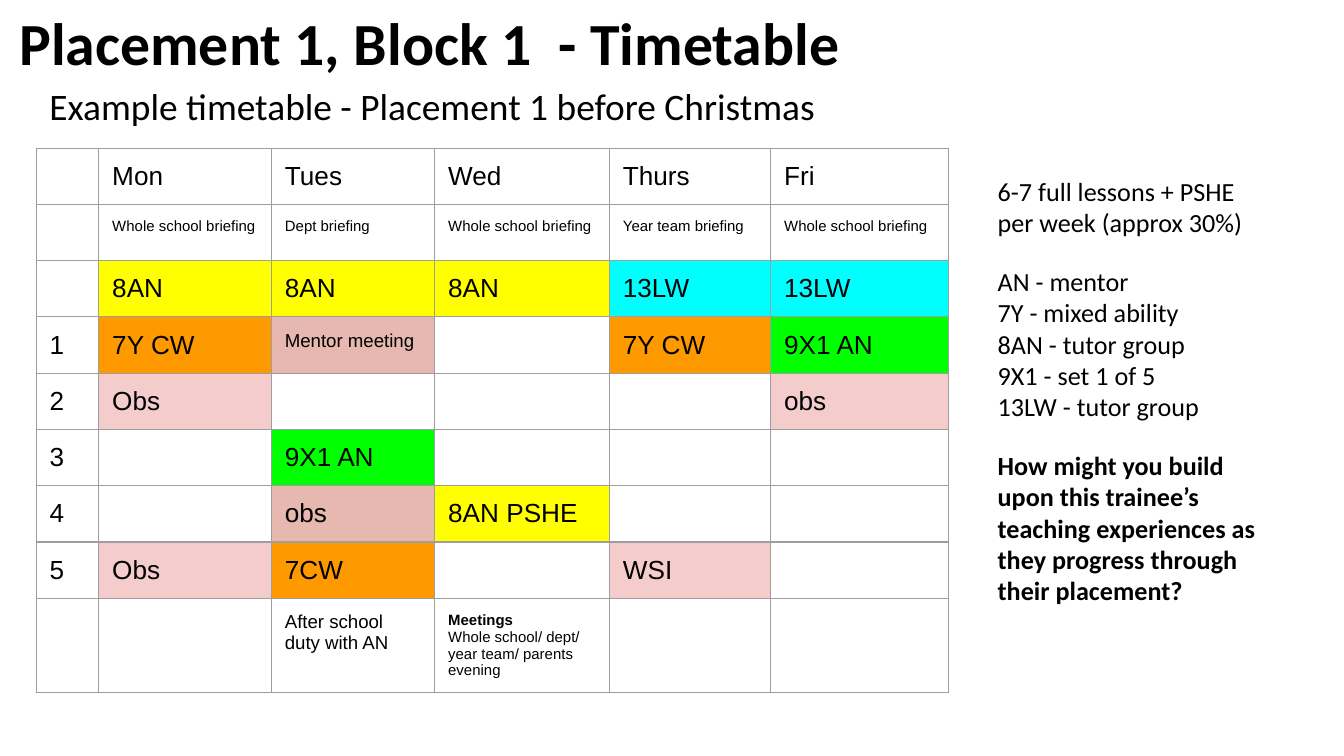
from lxml import etree
from pptx import Presentation
from pptx.dml.color import RGBColor
from pptx.enum.text import MSO_ANCHOR, MSO_AUTO_SIZE, PP_ALIGN
from pptx.oxml.ns import qn
from pptx.util import Inches, Pt

LEFT = PP_ALIGN.LEFT
MIDDLE, TOP = MSO_ANCHOR.MIDDLE, MSO_ANCHOR.TOP
NO_FIT = MSO_AUTO_SIZE.NONE

deck = Presentation()
deck.slide_width = Inches(10)
deck.slide_height = deck.slide_width * 9 // 16
column, row = deck.slide_width / 100, deck.slide_height / 100
page = deck.slides.add_slide(deck.slide_layouts[5])


def colour(value):
    return RGBColor.from_string(value)


def write(frame, lines, size, inset=0.1, anchor=TOP):
    frame.word_wrap = True
    for number, (line, bold, gap) in enumerate(lines):
        para = frame.paragraphs[0] if number == 0 else frame.add_paragraph()
        para.text = line
        para.alignment = LEFT
        para.space_before = Pt(gap)
        para.font.name, para.font.size, para.font.bold = "Calibri", Pt(size), bold
        para.font.color.rgb = colour("000000")
    frame.vertical_anchor = anchor
    frame.auto_size = NO_FIT
    frame.margin_left = frame.margin_right = Inches(inset)
    frame.margin_top = frame.margin_bottom = Inches(inset)


title = page.shapes.title
title.left, title.top = int(0.75 * column), int(-2.85 * row)
title.width, title.height = int(90 * column), int(16.7 * row)
write(title.text_frame, [("Placement 1, Block 1  - Timetable", True, 0)], 32, 0.07, MIDDLE)

subtitle = [("Example timetable - Placement 1 before Christmas", False, 0)]
notes = [
    ("6-7 full lessons + PSHE per week (approx 30%)", False, 0),
    ("AN - mentor", False, 14.6),
    ("7Y - mixed ability", False, 0),
    ("8AN - tutor group", False, 0),
    ("9X1 - set 1 of 5", False, 0),
    ("13LW - tutor group", False, 0),
    ("How might you build upon this trainee’s teaching experiences as they progress through their placement?", True, 14.6),
]
for left, top, width, height, lines, size in [
    (2.7, 9.25, 64.7, 9.25, subtitle, 20),
    (73.25, 21.4, 21.4, 9.8, notes, 14),
]:
    box = page.shapes.add_textbox(int(left * column), int(top * row), int(width * column), int(height * row))
    write(box.text_frame, lines, size)

timetable = [
    ["", "Mon", "Tues", "Wed", "Thurs", "Fri"],
    ["", "Whole school briefing", "Dept briefing", "Whole school briefing", "Year team briefing", "Whole school briefing"],
    ["", "8AN", "8AN", "8AN", "13LW", "13LW"],
    ["1", "7Y CW", "Mentor meeting", "", "7Y CW", "9X1 AN"],
    ["2", "Obs", "", "", "", "obs"],
    ["3", "", "9X1 AN", "", "", ""],
    ["4", "", "obs", "8AN PSHE", "", ""],
    ["5", "Obs", "7CW", "", "WSI", ""],
    ["", "", "After school duty with AN", "Meetings\nWhole school/ dept/ year team/ parents evening", "", ""],
]
fills = {
    "8AN": "FFFF00", "8AN PSHE": "FFFF00", "13LW": "00FFFF", "7Y CW": "FF9900", "7CW": "FF9900",
    "9X1 AN": "00FF00", "Obs": "F4CCCC", "obs": "F4CCCC", "WSI": "F4CCCC", "Mentor meeting": "E6B8AF",
}
tuesday = 2
after_school = len(timetable) - 1
column_widths = [4.65, 12.85, 12.15, 13, 12, 13.25]
row_heights = [7.42] * after_school + [12.4]

grid = page.shapes.add_table(
    len(row_heights), len(column_widths), int(2.7 * column), int(19.6 * row),
    int(sum(column_widths) * column), int(sum(row_heights) * row),
).table
grid.first_row = grid.horz_banding = False
for index, width in enumerate(column_widths):
    grid.columns[index].width = int(width * column)
for index, height in enumerate(row_heights):
    grid.rows[index].height = int(height * row)

for period, entries in enumerate(timetable):
    for day, entry in enumerate(entries):
        cell = grid.cell(period, day)
        properties = cell._tc.get_or_add_tcPr()
        for side in ("a:lnL", "a:lnR", "a:lnT", "a:lnB"):
            line = etree.SubElement(properties, qn(side), w=str(Pt(0.75)))
            solid = etree.SubElement(line, qn("a:solidFill"))
            etree.SubElement(solid, qn("a:srgbClr"), val="9E9E9E")
        fill = "E6B8AF" if entry == "obs" and day == tuesday else fills.get(entry)
        if period == after_school and day > 0:
            fill = "FFFFFF"
        if fill:
            cell.fill.solid()
            cell.fill.fore_color.rgb = colour(fill)
        else:
            cell.fill.background()
        if entry:
            cell.margin_left = cell.margin_right = cell.margin_top = cell.margin_bottom = Inches(0.1)
            cell.text = entry
            if period == 1 or entry.startswith("Meetings"):
                size = 8
            elif entry.startswith(("Mentor", "After")):
                size = 10
            else:
                size = 14
            for para in cell.text_frame.paragraphs:
                para.font.name, para.font.size = "Arial", Pt(size)
                para.font.bold = para.text == "Meetings"
                para.font.color.rgb = colour("000000")

deck.save("out.pptx")
